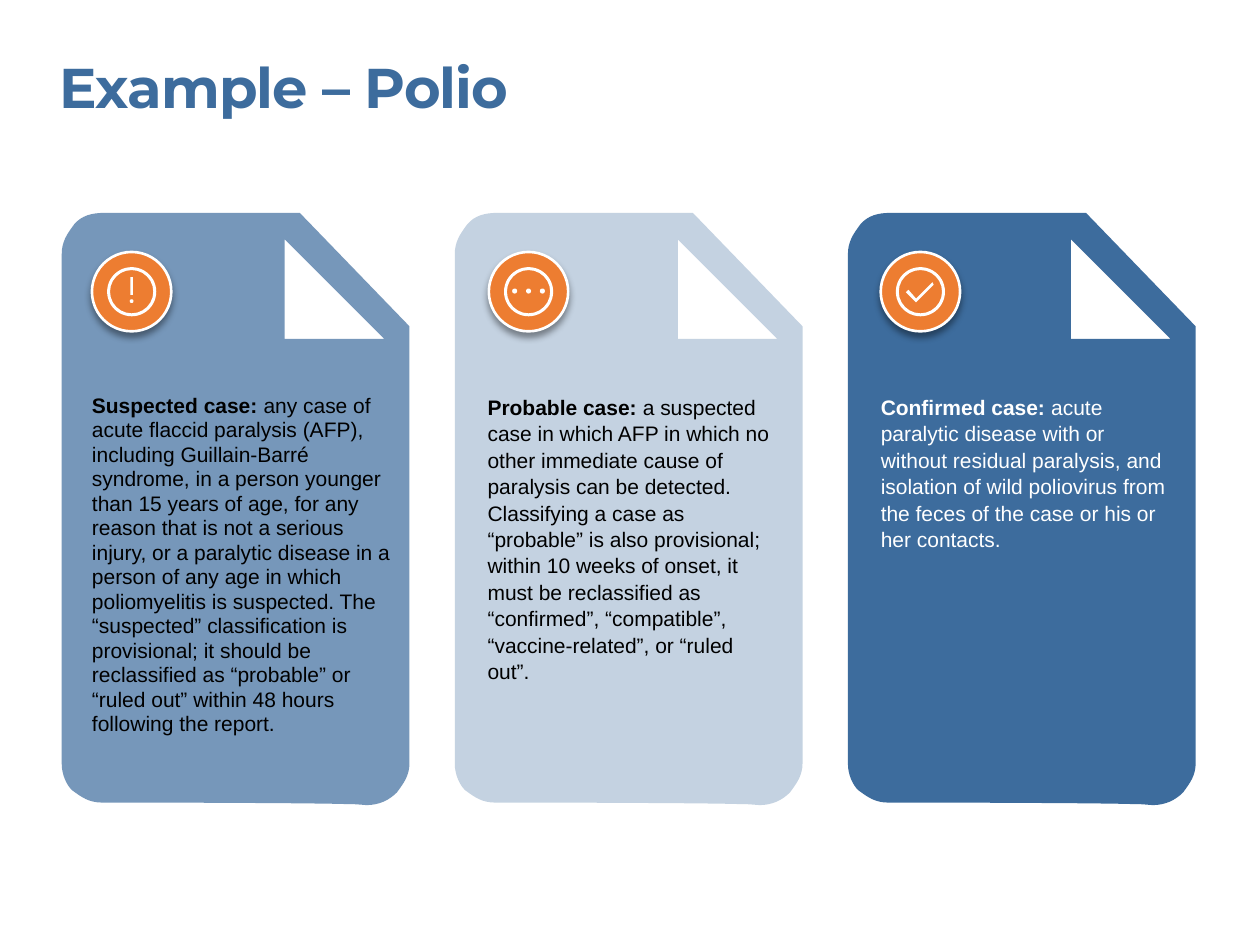
from lxml.etree import SubElement
from pptx import Presentation
from pptx.dml.color import RGBColor
from pptx.enum.shapes import MSO_SHAPE as SHAPE
from pptx.enum.text import MSO_ANCHOR as ANCHOR, MSO_AUTO_SIZE as AUTO, PP_ALIGN as ALIGN
from pptx.oxml.ns import qn
from pptx.util import Inches, Pt

BLUE, ORANGE, WHITE, BLACK = "3D6C9D", "ED7D31", "FFFFFF", "000000"

# Outline entries: a pair is a straight step, six numbers are a Bezier step.
CARD = [
    (0.32, 4.68), (0.22, 4.68, 0.16, 4.64, 0.08, 4.58),
    (0.04, 4.54, 0, 4.46, 0, 4.37), (0, 0.33),
    (0, 0.23, 0.04, 0.17, 0.1, 0.09), (0.16, 0.02, 0.24, 0, 0.34, 0),
    (1.89, 0), (2.76, 0.9), (2.76, 4.37),
    (2.76, 4.46, 2.72, 4.52, 2.66, 4.6),
    (2.6, 4.66, 2.52, 4.7, 2.42, 4.7),
    (2.44, 4.68, 0.32, 4.68, 0.32, 4.68),
]
FOLD = [(1.77, 1), (2.56, 1), (1.77, 0.21)]
CHECK = [(0.28, 0.4), (0.42, 0.26), (0.41, 0.24), (0.28, 0.37), (0.22, 0.3), (0.2, 0.32)]
CARD_LEFT, CARD_TOP, CARD_STEP = 0.49, 1.69, 3.12
ICON_TOP, ICON_SIZE, RING_SIZE = 2, 0.63, 0.39


def color(value):
    return RGBColor.from_string(value)


def flatten(outline, steps=8):
    """Turn an outline into points, sampling its Bezier steps."""
    points = []
    for entry in outline:
        if len(entry) == 2:
            points.append(entry)
            continue
        start = points[-1]
        for i in range(1, steps + 1):
            t = i / steps
            u = 1 - t
            weights = (u**3, 3 * u * u * t, 3 * u * t * t, t**3)
            points.append(tuple(
                sum(w * v for w, v in zip(weights, (start[axis], *entry[axis::2])))
                for axis in (0, 1)))
    return points


class Deck:
    font, size = "Arial", 12

    def __init__(self):
        self.prs = Presentation()
        self.prs.slide_width, self.prs.slide_height = Inches(10), Inches(7.5)
        self.s = self.prs.slides.add_slide(self.prs.slide_layouts[5])

    def frame(self, sp, box):
        sp.left, sp.top, sp.width, sp.height = map(Inches, box)
        tf = sp.text_frame
        tf.word_wrap = True
        tf.auto_size = AUTO.SHAPE_TO_FIT_TEXT
        tf.vertical_anchor = ANCHOR.TOP
        tf.margin_left = tf.margin_top = tf.margin_right = tf.margin_bottom = 0
        p = tf.paragraphs[0]
        p.alignment = ALIGN.LEFT
        return p

    def title(self, text, box):
        p = self.frame(self.s.shapes.title, box)
        r = p.add_run()
        r.text = text
        f = r.font
        f.name, f.size, f.bold = "Montserrat", Pt(32), True
        f.color.rgb = color(BLUE)
        r._r.get_or_add_rPr().set("spc", "-50")

    def definition(self, term, text, box, ink, spacing):
        p = self.frame(self.s.shapes.add_textbox(0, 0, 0, 0), box)
        p.line_spacing = spacing
        p.font.name, p.font.size = self.font, Pt(self.size)
        p.font.color.rgb = color(ink)
        for part, bold in ((term + " ", True), (text, False)):
            r = p.add_run()
            r.text, r.font.bold = part, bold

    def paint(self, sp, fill, opacity=100):
        sp.shadow.inherit = False
        sp.fill.solid()
        sp.fill.fore_color.rgb = color(fill)
        sp.line.fill.background()
        if opacity < 100:
            clr = sp._element.spPr.find(qn("a:solidFill"))[0]
            SubElement(clr, qn("a:alpha"), val=str(opacity * 1000))
        return sp

    def shape(self, kind, box, fill):
        return self.paint(self.s.shapes.add_shape(kind, *map(Inches, box)), fill)

    def outline(self, contours, left, top, fill, opacity=100):
        fb = None
        for contour in contours:
            points = [(Inches(left + x), Inches(top + y)) for x, y in flatten(contour)]
            if fb is None:
                fb = self.s.shapes.build_freeform(*points[0])
            else:
                fb.move_to(*points[0])
            fb.add_line_segments(points[1:], close=True)
        return self.paint(fb.convert_to_shape(), fill, opacity)

    def badge(self, left):
        """Draw a shadowed disc with a thin white ring."""
        sp = self.shape(SHAPE.OVAL, (left, ICON_TOP, ICON_SIZE, ICON_SIZE), ORANGE)
        sp.line.color.rgb, sp.line.width = color(WHITE), Pt(1.5)
        effects = sp._element.spPr.find(qn("a:effectLst"))
        shadow = SubElement(effects, qn("a:outerShdw"), blurRad=str(Pt(4)),
                            dist=str(Pt(3)), dir="5400000", algn="t", rotWithShape="0")
        clr = SubElement(shadow, qn("a:srgbClr"), val=BLACK)
        SubElement(clr, qn("a:alpha"), val="40000")
        inset = (ICON_SIZE - RING_SIZE) / 2
        ring = self.shape(SHAPE.DONUT, (left + inset, ICON_TOP + inset, RING_SIZE, RING_SIZE), WHITE)
        ring.adjustments[0] = 0.06

    def dot(self, x, y, size):
        self.shape(SHAPE.OVAL, (x - size / 2, y - size / 2, size, size), WHITE)

    def exclamation(self, left):
        mid = left + ICON_SIZE / 2
        self.shape(SHAPE.RECTANGLE, (mid - 0.01, 2.2, 0.02, 0.14), WHITE)
        self.dot(mid, 2.39, 0.03)

    def ellipsis(self, left):
        for i in (-1, 0, 1):
            self.dot(left + ICON_SIZE / 2 + i * 0.11, 2.31, 0.04)

    def check(self, left):
        self.outline([CHECK], left, ICON_TOP, WHITE)


def main():
    deck = Deck()
    deck.title("Example – Polio", (0.47, 0.42, 8.1, 0.54))
    cases = [
        ("Suspected case:",
         "any case of acute flaccid paralysis (AFP), including Guillain-Barré syndrome, "
         "in a person younger than 15 years of age, for any reason that is not a serious "
         "injury, or a paralytic disease in a person of any age in which poliomyelitis is "
         "suspected. The “suspected” classification is provisional; it should be "
         "reclassified as “probable” or “ruled out” within 48 hours following the report.",
         (0.73, 3.12, 2.39, 2.75), BLACK, Pt(14), 70, 0.73, deck.exclamation),
        ("Probable case:",
         "a suspected case in which AFP in which no other immediate cause of paralysis can "
         "be detected. Classifying a case as “probable” is also provisional; within 10 weeks "
         "of onset, it must be reclassified as “confirmed”, “compatible”, "
         "“vaccine-related”, or “ruled out”.",
         (3.87, 3.12, 2.24, 2.22), BLACK, 1.05, 30, 3.88, deck.ellipsis),
        ("Confirmed case:",
         "acute paralytic disease with or without residual paralysis, and isolation of wild "
         "poliovirus from the feces of the case or his or her contacts.",
         (6.99, 3.12, 2.28, 1.21), WHITE, 1.05, 100, 6.99, deck.check),
    ]
    for i, (term, text, box, ink, spacing, opacity, icon_left, draw_symbol) in enumerate(cases):
        deck.outline([CARD, FOLD], CARD_LEFT + i * CARD_STEP, CARD_TOP, BLUE, opacity)
        deck.definition(term, text, box, ink, spacing)
        deck.badge(icon_left)
        draw_symbol(icon_left)
    deck.prs.save("out.pptx")


if __name__ == "__main__":
    main()
